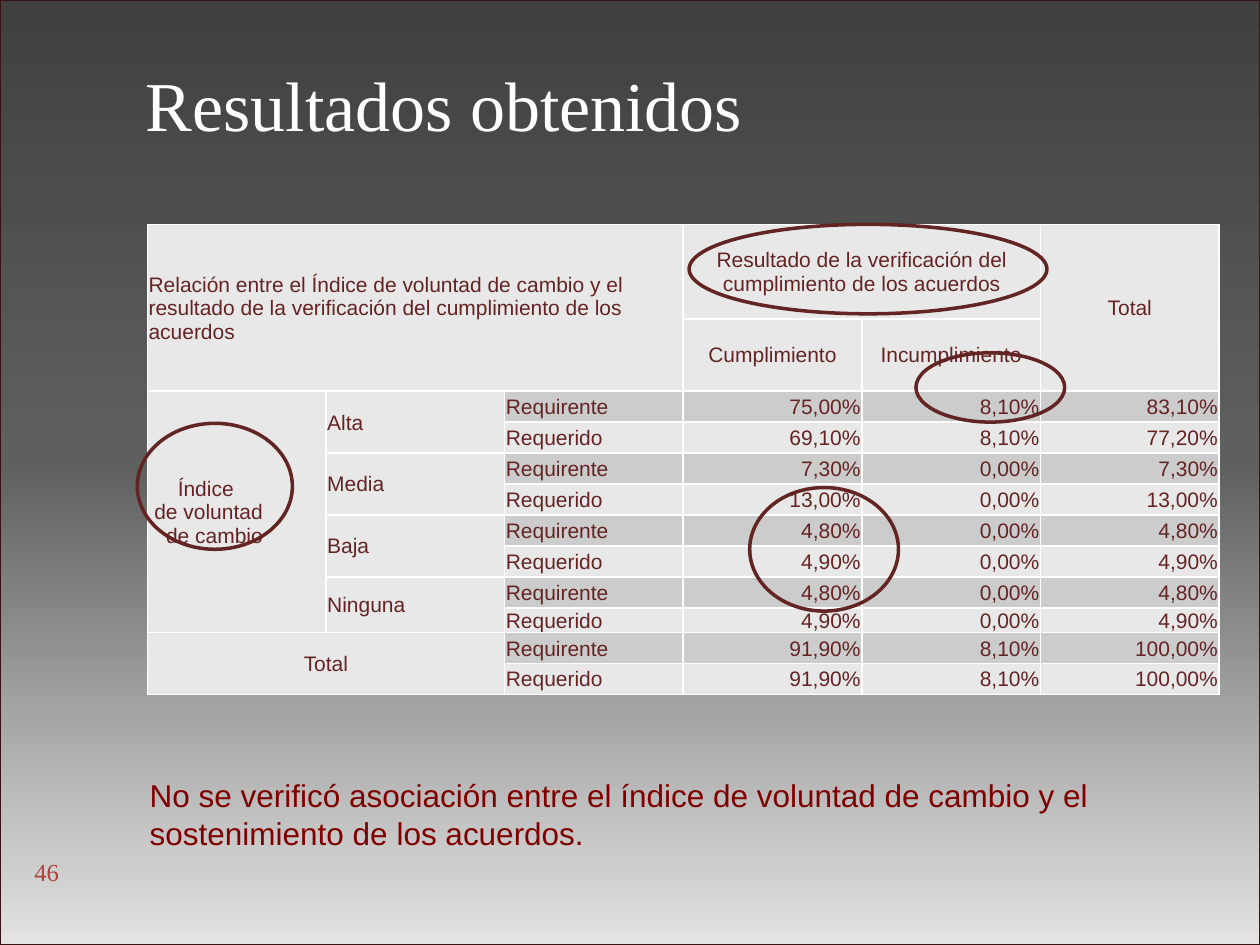
from lxml.etree import SubElement
from pptx import Presentation
from pptx.dml.color import RGBColor
from pptx.enum.shapes import MSO_SHAPE
from pptx.enum.text import MSO_ANCHOR, PP_ALIGN
from pptx.oxml.ns import qn
from pptx.util import Pt

HEX = {
    "white": "FFFFFF", "light": "E9E8E8", "grey": "CCCCCC",
    "text": "632423", "ring": "632523", "note": "800000",
    "page": "A9423D", "edge": "371413",
}
FADE = [(0, "404040"), (49, "5F5F5F"), (91, "CCCCCC"), (100, "E5E3E3")]
SIDES = ("a:lnL", "a:lnR", "a:lnT", "a:lnB")
LEFT, MID, RIGHT = PP_ALIGN.LEFT, PP_ALIGN.CENTER, PP_ALIGN.RIGHT

CELL = {"margin_left": Pt(0.72), "margin_right": Pt(0.72),
        "margin_top": Pt(0.72), "margin_bottom": 0,
        "vertical_anchor": MSO_ANCHOR.MIDDLE}
BARE = {"margin_left": 0, "margin_right": 0, "margin_top": 0,
        "margin_bottom": 0, "vertical_anchor": MSO_ANCHOR.TOP}

COL = 102.1
ROWS = [54, 41.3] + [17.7] * 7 + [13.8] + [17.7] * 2
# row, column, rows down, columns across, text, alignment
HEADS = [
    (0, 0, 2, 3, "Relación entre el Índice de voluntad de cambio y el resultado "
     "de la verificación del cumplimiento de los acuerdos", LEFT),
    (0, 3, 1, 2, "Resultado de la verificación del cumplimiento de los acuerdos", MID),
    (0, 5, 2, 1, "Total", MID),
    (1, 3, 1, 1, "Cumplimiento", MID),
    (1, 4, 1, 1, "Incumplimiento", MID),
    (2, 0, 8, 1, "Índice\nde voluntad\nde cambio", LEFT),
    (2, 1, 2, 1, "Alta", LEFT),
    (4, 1, 2, 1, "Media", LEFT),
    (6, 1, 2, 1, "Baja", LEFT),
    (8, 1, 2, 1, "Ninguna", LEFT),
    (10, 0, 2, 2, "Total", MID),
]
INDENTS = [16.7, 3.3, 10]
DATA = [
    ("75,00%", "8,10%", "83,10%"), ("69,10%", "8,10%", "77,20%"),
    ("7,30%", "0,00%", "7,30%"), ("13,00%", "0,00%", "13,00%"),
    ("4,80%", "0,00%", "4,80%"), ("4,90%", "0,00%", "4,90%"),
    ("4,80%", "0,00%", "4,80%"), ("4,90%", "0,00%", "4,90%"),
    ("91,90%", "8,10%", "100,00%"), ("91,90%", "8,10%", "100,00%"),
]
RINGS = [(393.8, 128.2, 204.5, 51.1), (523.4, 201.6, 85, 39.6),
         (78.5, 241.9, 88.6, 72), (428.4, 278.6, 85, 70.6)]


def tint(name):
    return RGBColor.from_string(HEX[name])


def apply(thing, form):
    for key, value in form.items():
        setattr(thing, key, value)


def write(frame, text, size, face, color, align=LEFT):
    frame.text = text
    for para in frame.paragraphs:
        para.alignment = align
        for run in para.runs:
            apply(run.font, {"size": Pt(size), "name": face})
            run.font.color.rgb = tint(color)


def draw(slide, kind, box, line=None, width=1):
    shape = slide.shapes.add_shape(kind, *map(Pt, box))
    shape.shadow.inherit = False
    shape.fill.background()
    if line:
        shape.line.color.rgb = tint(line)
        shape.line.width = Pt(width)
    else:
        shape.line.fill.background()
    return shape


def shade(shape):
    """Fill a shape with the fade from top to bottom."""
    shape.fill.gradient()
    grad = shape.fill._xPr.find(qn("a:gradFill"))
    stops = grad.find(qn("a:gsLst"))
    for stop in list(stops):
        stops.remove(stop)
    for place, color in FADE:
        stop = SubElement(stops, qn("a:gs"), pos=str(place * 1000))
        SubElement(stop, qn("a:srgbClr"), val=color)
    grad.find(qn("a:lin")).set("ang", "5400000")


def label(slide, box, text, size, face, color, wrap=True):
    frame = slide.shapes.add_textbox(*map(Pt, box)).text_frame
    frame.word_wrap = wrap
    write(frame, text, size, face, color)


def dress(cell, color):
    """Give a cell its margins, white borders and fill."""
    apply(cell, CELL)
    props = cell._tc.get_or_add_tcPr()
    for side in SIDES:
        line = SubElement(props, qn(side), w=str(Pt(1)))
        fill = SubElement(line, qn("a:solidFill"))
        SubElement(fill, qn("a:srgbClr"), val=HEX["white"])
    cell.fill.solid()
    cell.fill.fore_color.rgb = tint(color)


def grid(slide):
    frame = slide.shapes.add_table(len(ROWS), 6, Pt(84.2), Pt(128.2),
                                   Pt(COL * 6), Pt(sum(ROWS)))
    table = frame.table
    apply(table, {"first_row": False, "horz_banding": False})
    for col in table.columns:
        col.width = Pt(COL)
    for row, high in zip(table.rows, ROWS):
        row.height = Pt(high)

    cells = {(r, c): (text, align) for r, c, _, _, text, align in HEADS}
    for r, nums in enumerate(DATA, 2):
        cells[r, 2] = ("Requerido" if r % 2 else "Requirente", LEFT)
        cells.update({(r, c): (num, RIGHT) for c, num in enumerate(nums, 3)})

    for r in range(len(ROWS)):
        for c in range(6):
            cell = table.cell(r, c)
            dress(cell, "grey" if r > 1 and c > 1 and r % 2 == 0 else "light")
            if (r, c) in cells:
                text, align = cells[r, c]
                write(cell.text_frame, text, 12, "Arial", "text", align)
            else:
                para = cell.text_frame.paragraphs[0]
                SubElement(para._p, qn("a:endParaRPr"), sz="1200")

    for r, c, down, wide, _, _ in HEADS:
        if down * wide > 1:
            table.cell(r, c).merge(table.cell(r + down - 1, c + wide - 1))
    for para, dent in zip(table.cell(2, 0).text_frame.paragraphs, INDENTS):
        para._p.get_or_add_pPr().set("marL", str(Pt(dent)))


def main():
    deck = Presentation()
    apply(deck, {"slide_width": Pt(720), "slide_height": Pt(540)})
    slide = deck.slides.add_slide(deck.slide_layouts[6])

    shade(draw(slide, MSO_SHAPE.RECTANGLE, (0, 0, 720, 540), "edge"))
    page = draw(slide, MSO_SHAPE.OVAL, (14.4, 484.6, 36, 36)).text_frame
    apply(page, BARE)
    write(page, "46", 14, "Times New Roman", "page")

    grid(slide)
    for box in RINGS:
        draw(slide, MSO_SHAPE.OVAL, box, "ring", 2)

    label(slide, (78.5, 439.9, 621.4, 51.1),
          "No se verificó asociación entre el índice de voluntad de cambio "
          "y el sostenimiento de los acuerdos.", 18, "Arial", "note")
    label(slide, (76.3, 31.7, 359.3, 55.4), "Resultados obtenidos",
          40, "Times New Roman", "white", wrap=False)
    deck.save("out.pptx")


if __name__ == "__main__":
    main()
